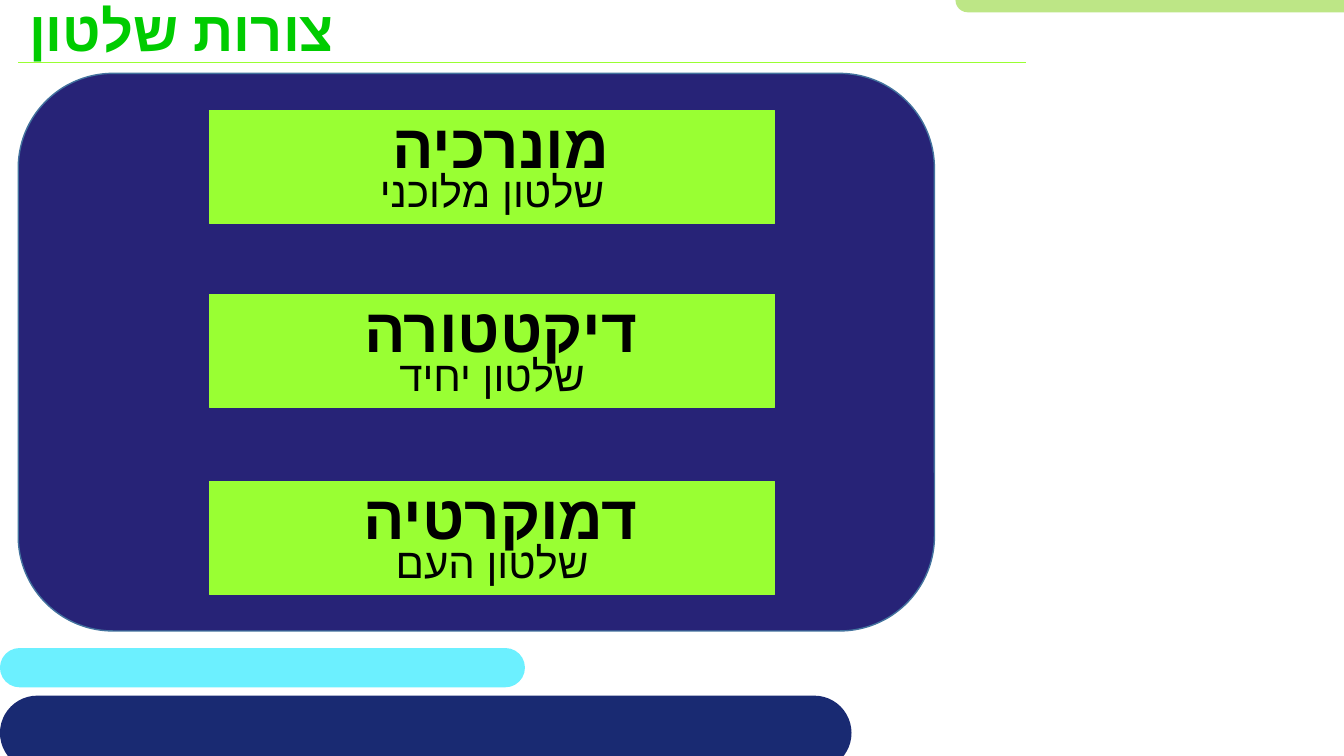
from dataclasses import dataclass

import lxml.etree
import pptx
import pptx.dml.color
import pptx.enum.shapes
import pptx.enum.text
import pptx.oxml.ns
import pptx.util

Cm = pptx.util.Cm
Pt = pptx.util.Pt
SHAPES = pptx.enum.shapes.MSO_SHAPE
ALIGN = pptx.enum.text.PP_ALIGN
ANCHOR = pptx.enum.text.MSO_ANCHOR
FONT = "Arial"
LIME = "99FF33"


@dataclass
class Panel:
    left: float
    top: float
    width: float
    height: float
    fill: str
    rounding: float = 0.5
    line: str = ""
    line_width: float = 1


@dataclass
class Regime:
    top: float
    name: str
    meaning: str


PANELS = [
    Panel(0, 16.33, 13.23, 0.99, "6CF0FF"),
    Panel(24.08, -0.3, 14.73, 0.61, "BDE686"),
    Panel(0, 17.53, 21.46, 1.88, "192A72"),
    Panel(0.46, 1.85, 23.09, 14.05, "272377", 0.17, "43739E"),
]
REGIMES = [
    Regime(2.79, "מונרכיה ", "שלטון מלוכני"),
    Regime(7.42, "דיקטטורה ", "שלטון יחיד"),
    Regime(12.14, "דמוקרטיה ", "שלטון העם"),
]


def colour(code: str) -> pptx.dml.color.RGBColor:
    return pptx.dml.color.RGBColor.from_string(code)


def write(paragraph, text: str, size: float, code: str, bold: bool, align) -> None:
    paragraph.text = text
    paragraph.alignment = align
    font = paragraph.font
    font.name, font.size, font.bold = FONT, Pt(size), bold
    font.color.rgb = colour(code)
    properties = paragraph._p.get_or_add_pPr()
    properties.set("rtl", "1")
    defaults = properties.find(pptx.oxml.ns.qn("a:defRPr"))
    script_font = lxml.etree.SubElement(defaults, pptx.oxml.ns.qn("a:cs"))
    script_font.set("typeface", FONT)


def draw_panel(slide, panel: Panel):
    kind = SHAPES.ROUNDED_RECTANGLE if panel.rounding else SHAPES.RECTANGLE
    shape = slide.shapes.add_shape(
        kind, Cm(panel.left), Cm(panel.top), Cm(panel.width), Cm(panel.height))
    shape.shadow.inherit = False
    shape.fill.solid()
    shape.fill.fore_color.rgb = colour(panel.fill)
    if panel.rounding:
        shape.adjustments[0] = panel.rounding
    if panel.line:
        shape.line.color.rgb = colour(panel.line)
        shape.line.width = Pt(panel.line_width)
    else:
        shape.line.fill.background()
    return shape


def draw_regime(slide, regime: Regime) -> None:
    box = draw_panel(slide, Panel(5.28, regime.top, 14.25, 2.84, LIME, 0, LIME, 0.75))
    frame = box.text_frame
    frame.word_wrap = True
    frame.vertical_anchor = ANCHOR.MIDDLE
    name, meaning = frame.paragraphs[0], frame.add_paragraph()
    write(name, regime.name, 44, "000000", True, ALIGN.CENTER)
    write(meaning, regime.meaning, 30, "000000", False, ALIGN.CENTER)
    name.line_spacing, meaning.line_spacing = Pt(45), Pt(25)


def draw_rule(slide) -> None:
    rule = slide.shapes.add_connector(
        pptx.enum.shapes.MSO_CONNECTOR.STRAIGHT, Cm(0.46), Cm(1.57), Cm(25.86), Cm(1.57))
    rule.line.color.rgb = colour(LIME)
    rule.line.width = Pt(0.5)
    lxml.etree.SubElement(rule._element.spPr, pptx.oxml.ns.qn("a:effectLst"))


def draw_title(slide) -> None:
    title = slide.shapes.title
    title.left, title.top, title.width, title.height = Cm(0.48), Cm(-0.41), Cm(23.88), Cm(3.99)
    frame = title.text_frame
    frame.vertical_anchor = ANCHOR.TOP
    frame.margin_top = Cm(0.3)
    write(frame.paragraphs[0], "צורות שלטון", 40, "00CC00", True, ALIGN.LEFT)


def main() -> None:
    deck = pptx.Presentation()
    deck.slide_width, deck.slide_height = Cm(33.87), Cm(19.05)
    slide = deck.slides.add_slide(deck.slide_layouts.get_by_name("Title Only"))
    for panel in PANELS:
        draw_panel(slide, panel)
    draw_rule(slide)
    draw_title(slide)
    for regime in REGIMES:
        draw_regime(slide, regime)
    deck.save("out.pptx")


if __name__ == "__main__":
    main()
